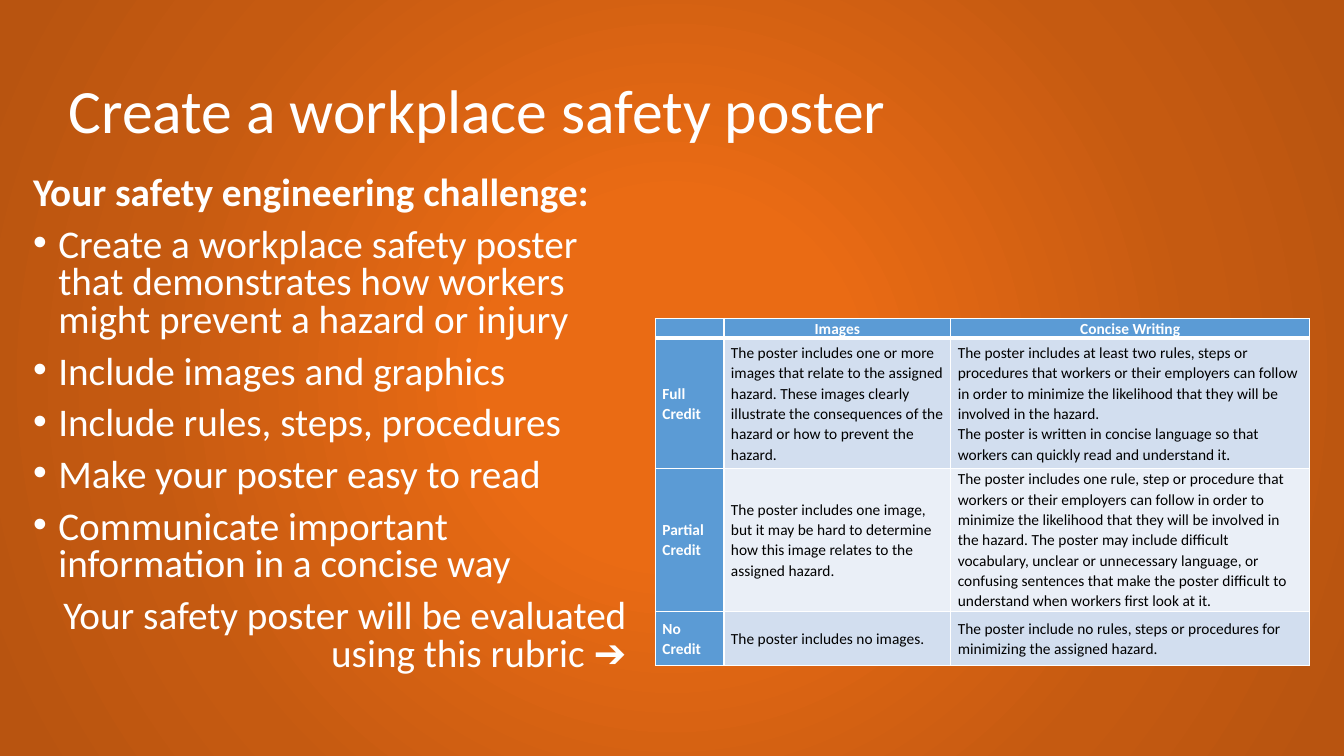
"""Build a slide that sets a workplace safety poster task and its scoring rubric."""
from lxml import etree
from pptx import Presentation
from pptx.dml.color import RGBColor
from pptx.enum import text
from pptx.oxml import parse_xml
from pptx.oxml.ns import nsdecls, qn
from pptx.util import Inches, Pt

COLORS = {"white": "FFFFFF", "black": "000000", "blue": "5B9BD5",
          "band_dark": "D2DEEF", "band_light": "EAEFF7"}
GRADIENT = [(0, "EA6B14"), (23, "EA6B14"), (69, "C55A11"), (97, "B85410")]
FONT = "Calibri"

TITLE = "Create a workplace safety poster"
HEADING = "Your safety engineering challenge:"
TASKS = [
    "Create a workplace safety poster that demonstrates how workers might prevent a hazard or injury",
    "Include images and graphics",
    "Include rules, steps, procedures",
    "Make your poster easy to read",
    "Communicate important information in a concise way",
]
CLOSING = "Your safety poster will be evaluated using this rubric ➔"

RUBRIC = [
    ([], ["Images"], ["Concise Writing"]),
    (["Full Credit"],
     ["The poster includes one or more images that relate to the assigned hazard. These images "
      "clearly illustrate the consequences of the hazard or how to prevent the hazard."],
     ["The poster includes at least two rules, steps or procedures that workers or their employers "
      "can follow in order to minimize the likelihood that they will be involved in the hazard.",
      "The poster is written in concise language so that workers can quickly read and understand it."]),
    (["Partial Credit"],
     ["The poster includes one image, but it may be hard to determine how this image relates to "
      "the assigned hazard."],
     ["The poster includes one rule, step or procedure that workers or their employers can follow "
      "in order to minimize the likelihood that they will be involved in the hazard. The poster may "
      "include difficult vocabulary, unclear or unnecessary language, or confusing sentences that "
      "make the poster difficult to understand when workers first look at it."]),
    (["No Credit"],
     ["The poster includes no images."],
     ["The poster include no rules, steps or procedures for minimizing the assigned hazard."]),
]
COL_WIDTHS = [0.68, 2.25, 3.56]
ROW_HEIGHTS = [0.19, 1.29, 1.42, 0.54]


def write(tf, content, size, color="white", bold=False, align=text.PP_ALIGN.LEFT,
          spacing=1.0, before=0, bullet=False, first=False):
    """Write one formatted paragraph into a text frame."""
    p = tf.paragraphs[0] if first else tf.add_paragraph()
    p.alignment, p.line_spacing, p.space_before = align, spacing, Pt(before)
    if bullet:
        pPr = p._p.get_or_add_pPr()
        pPr.set("marL", str(Inches(0.25)))
        pPr.set("indent", str(-Inches(0.25)))
        etree.SubElement(pPr, qn("a:buFont"), typeface="Arial")
        etree.SubElement(pPr, qn("a:buChar"), char="•")
    r = p.add_run()
    r.text = content
    r.font.name, r.font.size, r.font.bold = FONT, Pt(size), bold
    r.font.color.rgb = RGBColor.from_string(COLORS[color])


def set_background(s):
    """Give the slide a radial gradient."""
    stops = "".join(f'<a:gs pos="{pos * 1000}"><a:srgbClr val="{c}"/></a:gs>' for pos, c in GRADIENT)
    s._element.cSld.insert(0, parse_xml(
        f'<p:bg {nsdecls("p", "a")}><p:bgPr><a:gradFill rotWithShape="1"><a:gsLst>{stops}</a:gsLst>'
        '<a:path path="circle"><a:fillToRect l="50000" t="50000" r="50000" b="50000"/></a:path>'
        '</a:gradFill><a:effectLst/></p:bgPr></p:bg>'))


def set_borders(cell, widths):
    """Draw white borders with the given widths by side."""
    tcPr = cell._tc.get_or_add_tcPr()
    for side, width in widths.items():
        tcPr.append(parse_xml(
            f'<a:ln{side} {nsdecls("a")} w="{Pt(width)}"><a:solidFill>'
            f'<a:srgbClr val="{COLORS["white"]}"/></a:solidFill></a:ln{side}>'))


def add_rubric(s):
    """Add the scoring table."""
    table = s.shapes.add_table(len(RUBRIC), len(COL_WIDTHS), Inches(6.5), Inches(3.16),
                               Inches(sum(COL_WIDTHS)), Inches(sum(ROW_HEIGHTS))).table
    for col, width in zip(table.columns, COL_WIDTHS):
        col.width = Inches(width)
    for i, (row, height) in enumerate(zip(RUBRIC, ROW_HEIGHTS)):
        table.rows[i].height = Inches(height)
        for j, paragraphs in enumerate(row):
            cell = table.cell(i, j)
            label = i == 0 or j == 0
            set_borders(cell, {"L": 1, "R": 1, "T": 3 if i == 1 else 1, "B": 3 if i == 0 else 1})
            fill = "blue" if label else "band_dark" if i % 2 else "band_light"
            cell.fill.solid()
            cell.fill.fore_color.rgb = RGBColor.from_string(COLORS[fill])
            cell.margin_left = cell.margin_right = Inches(0.07)
            cell.margin_top = cell.margin_bottom = 0
            cell.vertical_anchor = text.MSO_ANCHOR.MIDDLE if i else text.MSO_ANCHOR.TOP
            for k, content in enumerate(paragraphs):
                write(cell.text_frame, content, 11, "white" if label else "black", label,
                      text.PP_ALIGN.LEFT if i else text.PP_ALIGN.CENTER, 1.07, first=k == 0)
            if not paragraphs:
                etree.SubElement(cell.text_frame.paragraphs[0]._p, qn("a:endParaRPr"), sz="1100")


def main():
    prs = Presentation()
    prs.slide_width, prs.slide_height = Inches(13.33), Inches(7.5)
    s = prs.slides.add_slide(prs.slide_layouts[5])
    set_background(s)

    title = s.shapes.title
    title.left, title.top, title.width, title.height = map(Inches, (0.58, 0.4, 11.83, 1.45))
    tf = title.text_frame
    tf.auto_size, tf.vertical_anchor = text.MSO_AUTO_SIZE.NONE, text.MSO_ANCHOR.MIDDLE
    write(tf, TITLE, 44, spacing=0.9, first=True)

    tf = s.shapes.add_textbox(*map(Inches, (0.23, 1.7, 6.08, 5.44))).text_frame
    tf.word_wrap = True
    write(tf, HEADING, 28, bold=True, spacing=0.8, first=True)
    for task in TASKS:
        write(tf, task, 28, spacing=0.8, before=10, bullet=True)
    write(tf, CLOSING, 28, align=text.PP_ALIGN.RIGHT, spacing=0.8, before=10)

    add_rubric(s)
    prs.save("out.pptx")


if __name__ == "__main__":
    main()
